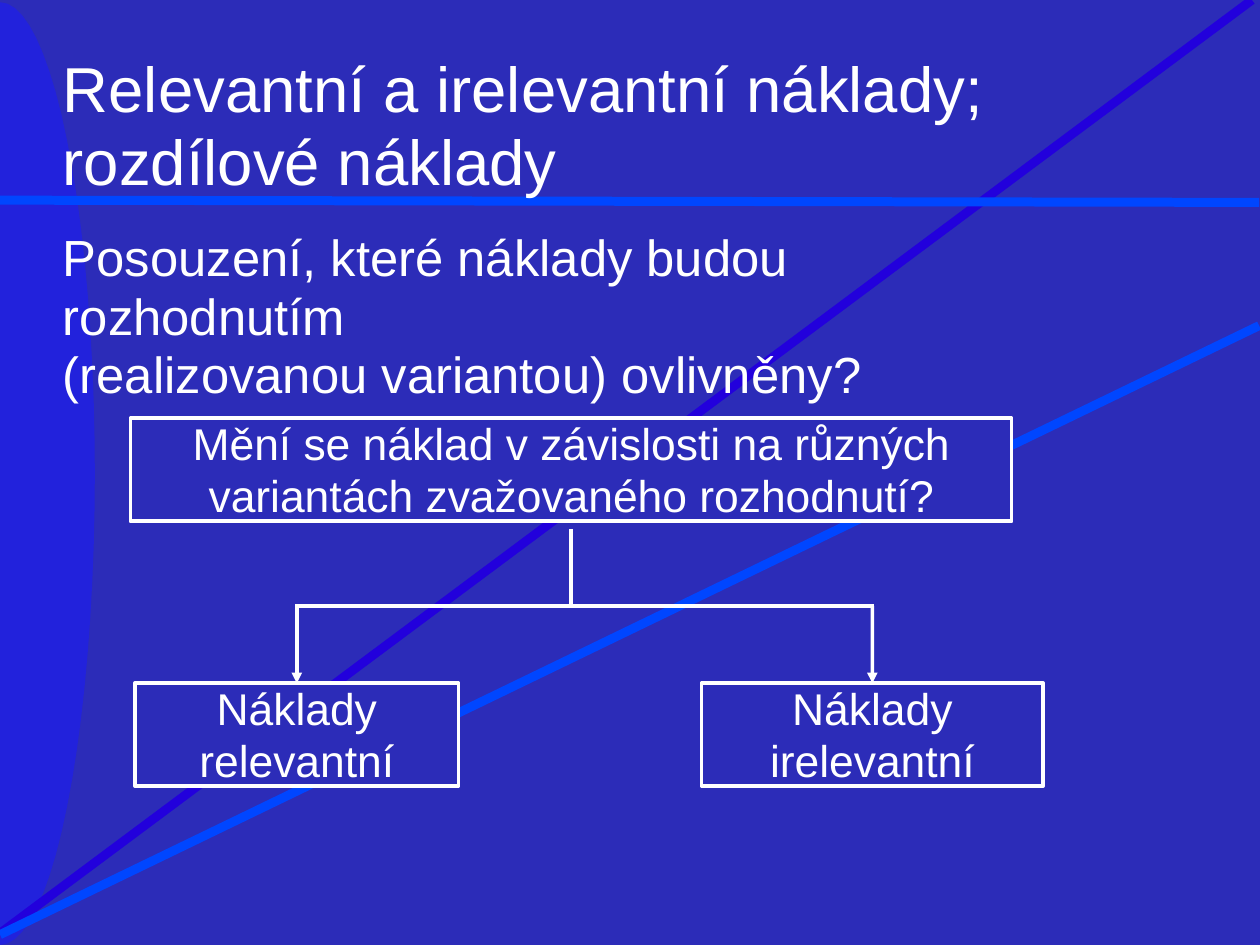
from math import cos, pi, sin

from pptx import Presentation
from pptx.dml.color import RGBColor
from pptx.enum import shapes as kinds, text as txt
from pptx.oxml.ns import qn
from pptx.util import Cm, Pt
from lxml import etree

HUES = {"back": "2C2CB8", "bulge": "2222DC", "dark": "2200DC",
        "bright": "0046FF", "white": "FFFFFF"}
WIDE, HIGH = 28.02, 21.01

# colour, x1, y1, x2, y2 in cm
RAYS = [("dark", 27.84, 0, 0, 20.75),
        ("bright", 28, 4.5, 0, 4.45),
        ("bright", 28, 7.24, 0, 20.78)]

# lines, place in cm, size and line pitch in points
TITLE = (["Relevantní a irelevantní náklady;", "rozdílové náklady"],
         (1.4, 1.17, 25.27, 3.28), 40, 46)
LEAD = (["Posouzení, které náklady budou rozhodnutím",
         "(realizovanou variantou) ovlivněny?"],
        (1.4, 5.08, 22.5, 3.9), 32, 36.8)

BOX_H, TOP, LOW = 2.29, 9.3, 15.19
ASK = (["Mění se náklad v závislosti na různých",
        "variantách zvažovaného rozhodnutí?"], (2.9, TOP, 19.6, BOX_H))
ENDS = [(["Náklady", "relevantní"], (3, LOW, 7.2, BOX_H)),
        (["Náklady", "irelevantní"], (15.6, LOW, 7.6, BOX_H))]
STEM, FORK = 11.76, 13.47


def paint(fill, hue):
    fill.solid()
    fill.fore_color.rgb = RGBColor.from_string(HUES[hue])


def write(shape, lines, size, pitch, align):
    frame = shape.text_frame
    form = {"margin_left": 0, "margin_right": 0, "margin_top": 0,
            "margin_bottom": 0, "word_wrap": True,
            "vertical_anchor": txt.MSO_ANCHOR.TOP}
    for key, val in form.items():
        setattr(frame, key, val)
    for i, line in enumerate(lines):
        para = frame.add_paragraph() if i else frame.paragraphs[0]
        para.alignment, para.line_spacing = align, Pt(pitch)
        run = para.add_run()
        run.text = line
        run.font.name, run.font.size = "Arial", Pt(size)
        run.font.color.rgb = RGBColor.from_string(HUES["white"])


def label(slide, lines, place, size, pitch):
    shape = slide.shapes.add_textbox(*map(Cm, place))
    write(shape, lines, size, pitch, txt.PP_ALIGN.LEFT)


def box(slide, lines, place):
    shape = slide.shapes.add_shape(kinds.MSO_SHAPE.RECTANGLE, *map(Cm, place))
    shape.shadow.inherit = False
    paint(shape.fill, "back")
    paint(shape.line.fill, "white")
    shape.line.width = Pt(2.25)
    write(shape, lines, 28, 32.5, txt.PP_ALIGN.CENTER)
    return shape


def link(slide, hue, width, x1, y1, x2, y2):
    line = slide.shapes.add_connector(kinds.MSO_CONNECTOR.STRAIGHT,
                                      *map(Cm, (x1, y1, x2, y2)))
    paint(line.line.fill, hue)
    line.line.width = Pt(width)
    etree.SubElement(line._element.spPr, qn("a:effectLst"))
    return line


def bulge(slide):
    """Half an ellipse resting on the left edge."""
    steps, rx, ry = 40, 2.11, 10.48
    turns = [pi * i / steps for i in range(steps + 1)]
    dots = [(Cm(rx * sin(t)), Cm(HIGH - ry - ry * cos(t))) for t in turns]
    pen = slide.shapes.build_freeform(*dots[0])
    pen.add_line_segments(dots[1:], close=True)
    shape = pen.convert_to_shape()
    shape.shadow.inherit = False
    paint(shape.fill, "bulge")
    shape.line.fill.background()


def tree(slide):
    box(slide, *ASK)
    mids = [x + w / 2 for _, (x, _, w, _) in ENDS]
    root = ASK[1][0] + ASK[1][2] / 2
    link(slide, "white", 2.25, root, STEM, root, FORK)
    bar = link(slide, "white", 2.25, mids[0], FORK, mids[1], FORK)
    bar.line._get_or_add_ln().set("cap", "sq")
    for (lines, place), mid in zip(ENDS, mids):
        leaf = box(slide, lines, place)
        drop = link(slide, "white", 2.25, mid, FORK, mid, LOW)
        drop.end_connect(leaf, 0)
        etree.SubElement(drop.line._get_or_add_ln(), qn("a:tailEnd"),
                         type="triangle", w="med", len="med")


def main():
    deck = Presentation()
    deck.slide_width, deck.slide_height = Cm(WIDE), Cm(HIGH)
    slide = deck.slides.add_slide(deck.slide_layouts[6])
    paint(slide.background.fill, "back")
    bulge(slide)
    for hue, *ends in RAYS:
        link(slide, hue, 5.67, *ends)
    for part in (TITLE, LEAD):
        label(slide, *part)
    tree(slide)
    deck.save("out.pptx")


if __name__ == "__main__":
    main()
